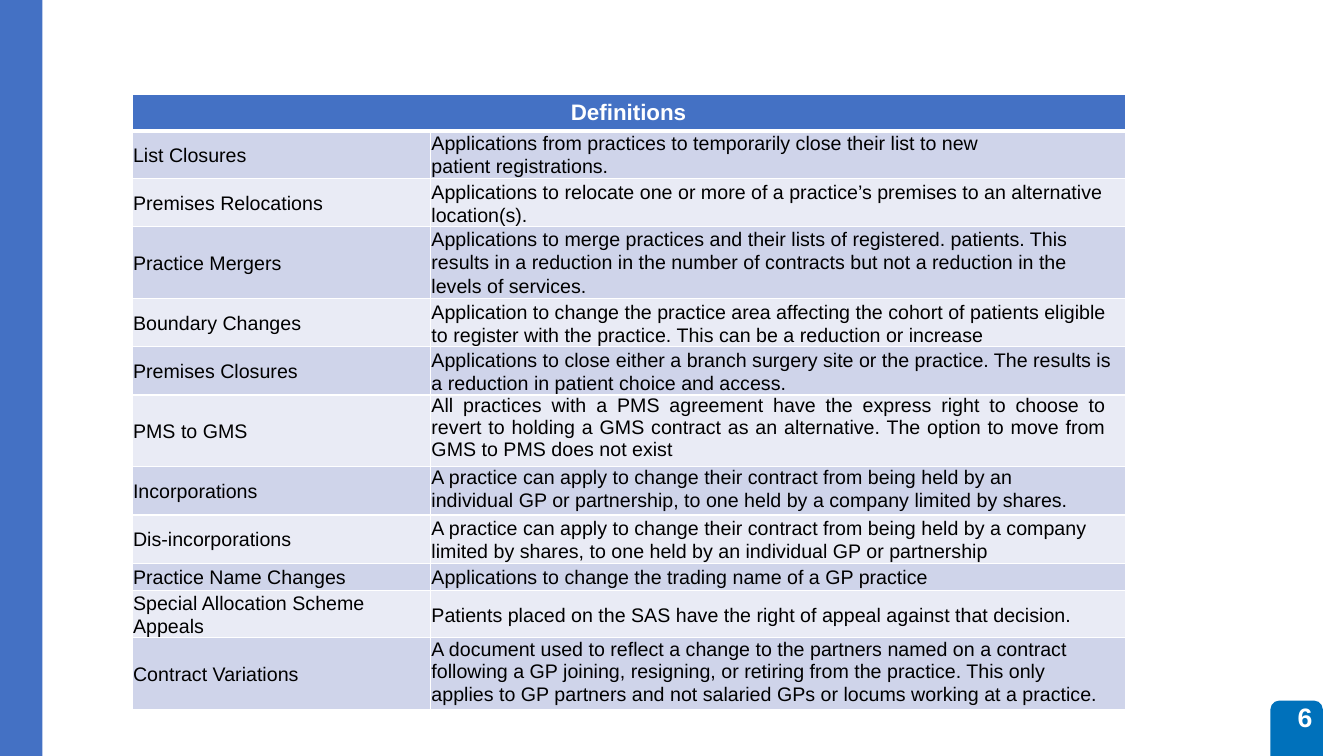
import pptx
import pptx.dml.color
import pptx.enum.shapes
import pptx.enum.text
import pptx.oxml
import pptx.oxml.ns
import pptx.util

SCALE = 9144
BLUE, TAB_BLUE, WHITE, BLACK = "4471C4", "0071BB", "FFFFFF", "000000"
BANDS = ("CFD4EA", "E9EBF5")
COLUMN_WIDTHS = (296, 689)
HEADER_HEIGHT = 36
TOP = pptx.enum.text.MSO_ANCHOR.TOP
MIDDLE = pptx.enum.text.MSO_ANCHOR.MIDDLE
CENTER = pptx.enum.text.PP_ALIGN.CENTER
JUSTIFY = pptx.enum.text.PP_ALIGN.JUSTIFY
LEFT = pptx.enum.text.PP_ALIGN.LEFT

# Term, meaning, row height, top inset, right inset, line spacing in points, alignment
DEFINITIONS = [
    ("List Closures",
     "Applications from practices to temporarily close their list to new patient registrations.",
     47, 0, 120, 16.8, LEFT),
    ("Premises Relocations",
     "Applications to relocate one or more of a practice’s premises to an alternative\n"
     "location(s).",
     48, 2, 8, 16.4, LEFT),
    ("Practice Mergers",
     "Applications to merge practices and their lists of registered. patients. This results in a "
     "reduction in the number of contracts but not a reduction in the levels of services.",
     71, 0, 20, 16.8, LEFT),
    ("Boundary Changes",
     "Application to change the practice area affecting the cohort of patients eligible to "
     "register with the practice. This can be a reduction or increase",
     48, 2, 8, 16.5, LEFT),
    ("Premises Closures",
     "Applications to close either a branch surgery site or the practice. The results is a "
     "reduction in patient choice and access.",
     48, 2, 8, 16.4, LEFT),
    ("PMS to GMS",
     "All practices with a PMS agreement have the express right to choose to revert to holding "
     "a GMS contract as an alternative. The option to move from GMS to PMS does not exist",
     71, 0, 19, 15.7, JUSTIFY),
    ("Incorporations",
     "A practice can apply to change their contract from being held by an individual GP or "
     "partnership, to one held by a company limited by shares.",
     48, 0, 50, 16, LEFT),
    ("Dis-incorporations",
     "A practice can apply to change their contract from being held by a company\n"
     "limited by shares, to one held by an individual GP or partnership",
     48, 2, 8, 16.4, LEFT),
    ("Practice Name Changes",
     "Applications to change the trading name of a GP practice",
     27, 3, 8, 16.2, LEFT),
    ("Special Allocation Scheme Appeals",
     "Patients placed on the SAS have the right of appeal against that decision.",
     47, 13, 8, 16.2, LEFT),
    ("Contract Variations",
     "A document used to reflect a change to the partners named on a contract\n"
     "following a GP joining, resigning, or retiring from the practice. This only applies to GP "
     "partners and not salaried GPs or locums working at a practice.",
     71, 0, 20, 16.1, LEFT),
]


def px(length):
    return pptx.util.Emu(length * SCALE)


def color(hex_value):
    return pptx.dml.color.RGBColor.from_string(hex_value)


def paint(target, hex_value):
    target.fill.solid()
    target.fill.fore_color.rgb = color(hex_value)


def write(frame, text, size, hex_value, bold=False, align=LEFT, spacing=None):
    frame.text = text
    frame.word_wrap = True
    for paragraph in frame.paragraphs:
        paragraph.alignment = align
        if spacing:
            paragraph.line_spacing = pptx.util.Pt(spacing)
        for run in paragraph.runs:
            run.font.name = "Arial"
            run.font.size = pptx.util.Pt(size)
            run.font.bold = bold
            run.font.color.rgb = color(hex_value)


def set_insets(target, left=0, top=0, right=0):
    target.margin_left, target.margin_top = px(left), px(top)
    target.margin_right, target.margin_bottom = px(right), px(0)


def add_block(slide, preset, bounds, hex_value):
    block = slide.shapes.add_shape(preset, *map(px, bounds))
    block.shadow.inherit = False
    paint(block, hex_value)
    block.line.fill.background()
    return block


def add_borders(cell, top=1, bottom=1):
    properties = cell._tc.get_or_add_tcPr()
    for side, points in (("L", 1), ("R", 1), ("T", top), ("B", bottom)):
        properties.append(pptx.oxml.parse_xml(
            f'<a:ln{side} {pptx.oxml.ns.nsdecls("a")} w="{points * 12700}">'
            f'<a:solidFill><a:srgbClr val="{WHITE}"/></a:solidFill></a:ln{side}>'))


def style_cell(cell, hex_value, anchor, top_border=1, bottom_border=1):
    add_borders(cell, top_border, bottom_border)
    paint(cell, hex_value)
    cell.vertical_anchor = anchor


def add_definitions(slide):
    heights = [HEADER_HEIGHT] + [entry[2] for entry in DEFINITIONS]
    bounds = (131, 94, sum(COLUMN_WIDTHS), sum(heights))
    table = slide.shapes.add_table(len(heights), 2, *map(px, bounds)).table
    table.first_row = table.horz_banding = False
    for column, width in zip(table.columns, COLUMN_WIDTHS):
        column.width = px(width)
    for row, height in zip(table.rows, heights):
        row.height = px(height)

    heading = table.cell(0, 0)
    heading.merge(table.cell(0, 1))
    for cell in table.rows[0].cells:
        set_insets(cell)
        style_cell(cell, BLUE, MIDDLE, bottom_border=3)
    write(heading.text_frame, "Definitions", 16, WHITE, True, CENTER)

    for index, entry in enumerate(DEFINITIONS):
        term, meaning, height, top, right, spacing, align = entry
        term_cell, meaning_cell = table.rows[index + 1].cells
        for cell, anchor in ((term_cell, MIDDLE), (meaning_cell, TOP)):
            style_cell(cell, BANDS[index % 2], anchor, 1 if index else 3)
        set_insets(term_cell, 1)
        write(term_cell.text_frame, term, 14, BLACK, spacing=16.8)
        set_insets(meaning_cell, 1, top, right)
        write(meaning_cell.text_frame, meaning, 14, BLACK, align=align, spacing=spacing)


def add_page_number(slide):
    presets = pptx.enum.shapes.MSO_SHAPE
    tab = add_block(slide, presets.ROUND_2_SAME_RECTANGLE, (1260, 695, 52, 55), TAB_BLUE)
    tab.adjustments[0] = 0.17
    number = slide.shapes.add_textbox(*map(px, (1266, 697, 42, 37))).text_frame
    set_insets(number, 21)
    write(number, "6", 19, WHITE, True, spacing=21.9)


def main():
    deck = pptx.Presentation()
    deck.slide_width, deck.slide_height = px(1333), px(750)
    slide = deck.slides.add_slide(deck.slide_layouts[6])
    add_block(slide, pptx.enum.shapes.MSO_SHAPE.RECTANGLE, (0, 0, 42, 750), BLUE)
    add_definitions(slide)
    add_page_number(slide)
    deck.save("out.pptx")


if __name__ == "__main__":
    main()
